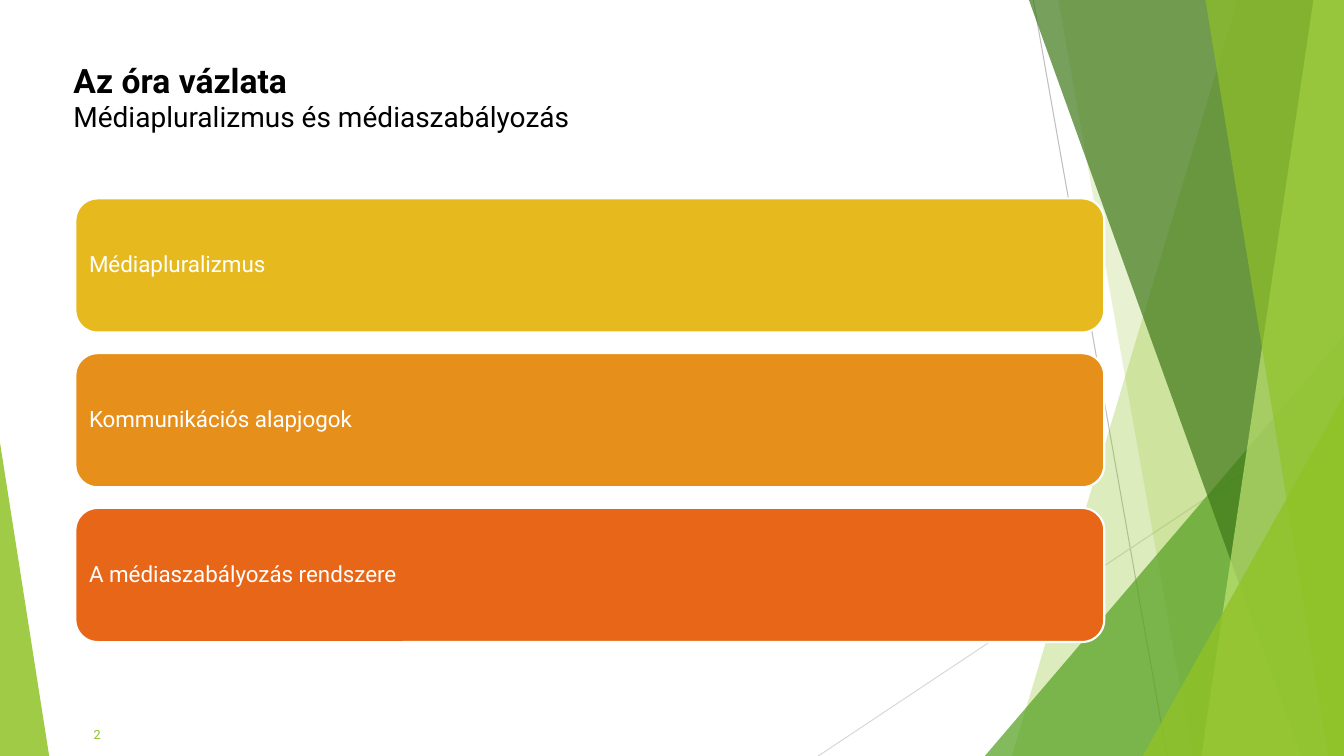
"""Builds the lesson outline slide with three topic cards on a faceted green backdrop."""
from lxml import etree
from pptx import Presentation
from pptx.dml.color import RGBColor
from pptx.enum.shapes import MSO_CONNECTOR, MSO_SHAPE
from pptx.enum.text import MSO_ANCHOR, PP_ALIGN
from pptx.oxml.ns import qn
from pptx.util import Cm, Pt

STRAIGHT = MSO_CONNECTOR.STRAIGHT
TRIANGLE = MSO_SHAPE.ISOSCELES_TRIANGLE
ROUNDED = MSO_SHAPE.ROUNDED_RECTANGLE
MIDDLE = MSO_ANCHOR.MIDDLE
LEFT, RIGHT = PP_ALIGN.LEFT, PP_ALIGN.RIGHT

BLACK = RGBColor(0x00, 0x00, 0x00)
WHITE = RGBColor(0xFF, 0xFF, 0xFF)
GREY = RGBColor(0xBF, 0xBF, 0xBF)
PALE_GREY = RGBColor(0xD9, 0xD9, 0xD9)
LIME = RGBColor(0x90, 0xC2, 0x26)
LEAF = RGBColor(0x54, 0xA0, 0x21)
FOREST = RGBColor(0x3F, 0x78, 0x19)
PALE_LIME = RGBColor(0xC0, 0xE4, 0x74)
YELLOW = RGBColor(0xE6, 0xB9, 0x1E)
ORANGE = RGBColor(0xE6, 0x90, 0x1B)
RED_ORANGE = RGBColor(0xE7, 0x66, 0x18)

WIDTH, HEIGHT = 33.87, 19.05
CARD_TOP, CARD_HEIGHT, CARD_PITCH = 5.0, 3.38, 3.9


def assign(target, values):
    for name, value in values.items():
        setattr(target, name, value)


class OutlineSlide:
    font = "Roboto"

    def __init__(self, page):
        self.page = page

    def line(self, start, end, color):
        rule = self.page.shapes.add_connector(STRAIGHT, *map(Cm, start + end))
        rule.line.color.rgb = color
        rule.line.width = Pt(0.75)
        etree.SubElement(rule._element.spPr, qn("a:effectLst"))

    def paint(self, shape, color, opacity):
        shape.shadow.inherit = False
        shape.fill.solid()
        shape.fill.fore_color.rgb = color
        shape.line.fill.background()
        tint = shape._element.spPr.find(qn("a:solidFill"))[0]
        etree.SubElement(tint, qn("a:alpha"), val=str(opacity * 1000))

    def facet(self, top_left, top_right, bottom_left, color, opacity):
        outline = self.page.shapes.build_freeform(Cm(top_left), 0)
        corners = [(top_right, 0), (WIDTH, HEIGHT), (bottom_left, HEIGHT)]
        outline.add_line_segments([(Cm(x), Cm(y)) for x, y in corners])
        self.paint(outline.convert_to_shape(), color, opacity)

    def triangle(self, left, top, width, apex, color, opacity):
        shape = self.page.shapes.add_shape(
            TRIANGLE, Cm(left), Cm(top), Cm(width), Cm(HEIGHT - top))
        shape.adjustments[0] = apex
        self.paint(shape, color, opacity)

    def span(self, para, text, size, color, bold=False):
        span = para.add_run()
        span.text = text
        assign(span.font, {"name": self.font, "size": Pt(size), "bold": bold})
        span.font.color.rgb = color

    def text(self, place, rows, color, layout):
        box = self.page.shapes.add_textbox(*map(Cm, place))
        frame = box.text_frame
        assign(frame, {"word_wrap": True, "vertical_anchor": MIDDLE})
        for index, (text, size, bold) in enumerate(rows):
            para = frame.add_paragraph() if index else frame.paragraphs[0]
            assign(para, layout)
            self.span(para, text, size, color, bold)

    def card(self, top, text, color):
        card = self.page.shapes.add_shape(
            ROUNDED, Cm(1.9), Cm(top), Cm(25.93), Cm(CARD_HEIGHT))
        card.shadow.inherit = False
        card.fill.solid()
        card.fill.fore_color.rgb = color
        card.line.color.rgb = WHITE
        card.line.width = Pt(1.5)
        frame = card.text_frame
        assign(frame, {"word_wrap": True, "vertical_anchor": MIDDLE,
                       "margin_left": Cm(0.18), "margin_right": Cm(0.18)})
        para = frame.paragraphs[0]
        assign(para, {"alignment": LEFT, "line_spacing": 0.9})
        self.span(para, text, 16, WHITE)


def main():
    deck = Presentation()
    assign(deck, {"slide_width": Cm(WIDTH), "slide_height": Cm(HEIGHT)})
    slide = OutlineSlide(deck.slides.add_slide(deck.slide_layouts[6]))

    slide.line((26.04, 0), (29.41, HEIGHT), GREY)
    slide.line((WIDTH, 10.24), (20.62, HEIGHT), PALE_GREY)
    slide.facet(31.19, WIDTH, 25.5, LIME, 30)
    slide.facet(26.67, WIDTH, 30.05, LIME, 20)
    slide.triangle(24.82, 8.46, 9.05, 1, LEAF, 72)
    slide.facet(25.93, WIDTH, 32.79, FOREST, 70)
    slide.facet(33.1, WIDTH, 30.28, PALE_LIME, 70)
    slide.facet(30.38, WIDTH, 33.48, LIME, 65)
    slide.triangle(28.8, 9.98, 5.07, 1, LIME, 80)
    slide.triangle(0, 11.15, 1.24, 0, LIME, 85)

    heading = [("Az óra vázlata", 24, True),
               ("Médiapluralizmus és médiaszabályozás", 20, False)]
    slide.text((1.6, 1.52, 30.66, 2.0), heading, BLACK, {"line_spacing": Pt(24)})
    slide.text((1.6, 18.16, 1.19, 0.71), [("2", 9, False)], LIME, {"alignment": RIGHT})

    topics = [("Médiapluralizmus", YELLOW),
              ("Kommunikációs alapjogok", ORANGE),
              ("A médiaszabályozás rendszere", RED_ORANGE)]
    for index, (topic, color) in enumerate(topics):
        slide.card(CARD_TOP + index * CARD_PITCH, topic, color)

    deck.save("out.pptx")


if __name__ == "__main__":
    main()
